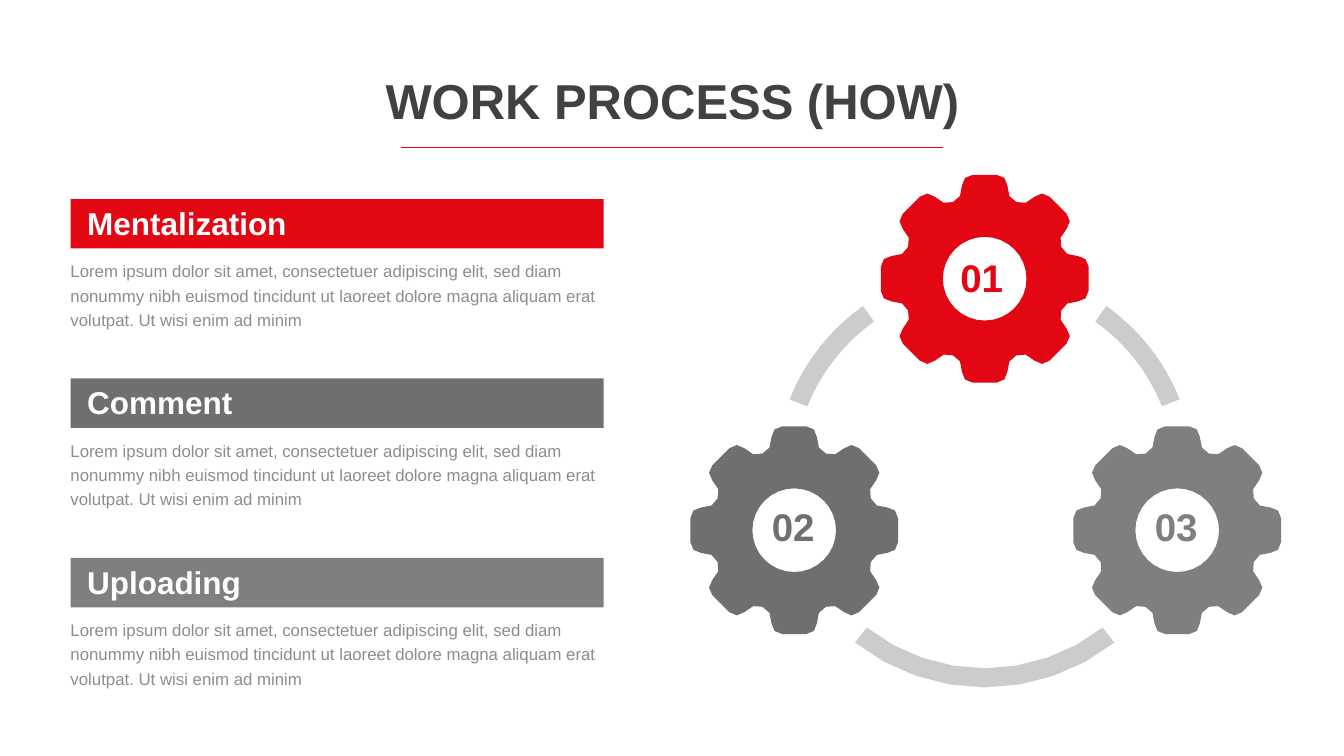
from math import cos, pi, radians, sin

from lxml import etree
from pptx import Presentation
from pptx.dml.color import RGBColor
from pptx.enum.shapes import MSO_CONNECTOR, MSO_SHAPE
from pptx.enum.text import MSO_AUTO_SIZE, PP_ALIGN
from pptx.oxml.ns import qn
from pptx.util import Inches, Pt

RECTANGLE = MSO_SHAPE.RECTANGLE
STRAIGHT = MSO_CONNECTOR.STRAIGHT
GROW = MSO_AUTO_SIZE.SHAPE_TO_FIT_TEXT
LEFT, CENTER = PP_ALIGN.LEFT, PP_ALIGN.CENTER

COLORS = {
    "red": "E30613",
    "dark gray": "706F6F",
    "gray": "7F7F7F",
    "light gray": "CCCCCC",
    "ink": "414141",
    "white": "FFFFFF",
}
BODY = ("Lorem ipsum dolor sit amet, consectetuer adipiscing elit, sed diam "
        "nonummy nibh euismod tincidunt ut laoreet dolore magna aliquam erat "
        "volutpat. Ut wisi enim ad minim")

deck = Presentation()
deck.slide_width, deck.slide_height = Inches(26.67), Inches(15)
page = deck.slides.add_slide(deck.slide_layouts[6])


def add_text(text, left, top, width, height, size, color, bold=True,
             align=LEFT, spacing=None, alpha=None):
    box = page.shapes.add_textbox(Inches(left), Inches(top), Inches(width), Inches(height))
    box.text_frame.word_wrap = True
    box.text_frame.auto_size = GROW
    para = box.text_frame.paragraphs[0]
    para.alignment = align
    if spacing:
        para.line_spacing = spacing
    span = para.add_run()
    span.text = text
    span.font.name = "Arial"
    span.font.size = Pt(size)
    span.font.bold = bold
    span.font.color.rgb = RGBColor.from_string(COLORS[color])
    if alpha:
        fill = span.font._element.find(".//" + qn("a:srgbClr"))
        etree.SubElement(fill, qn("a:alpha"), val=str(alpha * 1000))


def add_outline(contours, color):
    """Draw closed contours, given as points in inches, as one filled shape."""
    contours = [[(Inches(x), Inches(y)) for x, y in points] for points in contours]
    builder = page.shapes.build_freeform(*contours[0][0])
    for index, points in enumerate(contours):
        if index:
            builder.move_to(*points[0])
        builder.add_line_segments(points[1:], close=True)
    shape = builder.convert_to_shape()
    shape.shadow.inherit = False
    shape.fill.solid()
    shape.fill.fore_color.rgb = RGBColor.from_string(COLORS[color])
    shape.line.fill.background()


# Headed paragraphs
sections = [("Mentalization", "red"), ("Comment", "dark gray"), ("Uploading", "gray")]
for index, (heading, color) in enumerate(sections):
    top = 3.95 + 3.56 * index
    bar = page.shapes.add_shape(RECTANGLE, Inches(1.4), Inches(top), Inches(10.58), Inches(0.98))
    bar.shadow.inherit = False
    bar.fill.solid()
    bar.fill.fore_color.rgb = RGBColor.from_string(COLORS[color])
    bar.line.fill.background()
    add_text(heading, 1.63, top + 0.05, 10.35, 0.86, 45, "white")
    add_text(BODY, 1.3, top + 1.1, 10.68, 1.56, 24, "ink", bold=False, spacing=1.2, alpha=60)

# Title and its rule
add_text("WORK PROCESS (HOW)", 4.47, 1.11, 17.75, 1.4, 70, "ink", align=CENTER, spacing=1.2)
rule = page.shapes.add_connector(STRAIGHT, Inches(7.96), Inches(2.92), Inches(18.71), Inches(2.92))
rule.line.color.rgb = RGBColor.from_string(COLORS["red"])
rule.line.width = Pt(0.5)
etree.SubElement(rule._element.spPr, qn("a:effectLst"))

# One tooth pointing up, from the valley at its left to the one at its right
half_tooth = [(-0.63, 1.52), (-0.49, 1.64), (-0.45, 1.85), (-0.39, 2.0), (-0.24, 2.06)]
tooth = half_tooth + [(-x, y) for x, y in reversed(half_tooth[1:])]
gear = [(x * cos(turn) + y * sin(turn), x * sin(turn) - y * cos(turn))
        for turn in [pi / 4 * n for n in range(8)] for x, y in tooth]
hole = [(0.83 * cos(-pi * n / 16), 0.83 * sin(-pi * n / 16)) for n in range(32)]

# Numbered gears: centre of the gear, then centre of its number
gears = [
    ("01", "red", 19.54, 5.53, 19.48, 5.5),
    ("02", "dark gray", 15.76, 10.52, 15.74, 10.44),
    ("03", "gray", 23.36, 10.52, 23.34, 10.44),
]
for number, color, x, y, number_x, number_y in gears:
    add_outline([[(x + dx, y + dy) for dx, dy in contour] for contour in (gear, hole)], color)
    add_text(number, number_x - 0.65, number_y - 0.51, 1.3, 1.03, 55, color, align=CENTER)

# Arcs of one ring that link the gears, in degrees clockwise from the right
RING_X, RING_Y, OUTER, INNER = 19.54, 9.47, 4.17, 3.79
for start, end in [(51.9, 128.1), (201.8, 234.6), (305.4, 338.2)]:
    angles = [radians(start + (end - start) * n / 8) for n in range(9)]
    edge = [(OUTER, angle) for angle in angles] + [(INNER, angle) for angle in reversed(angles)]
    add_outline([[(RING_X + r * cos(a), RING_Y + r * sin(a)) for r, a in edge]], "light gray")

deck.save("out.pptx")
